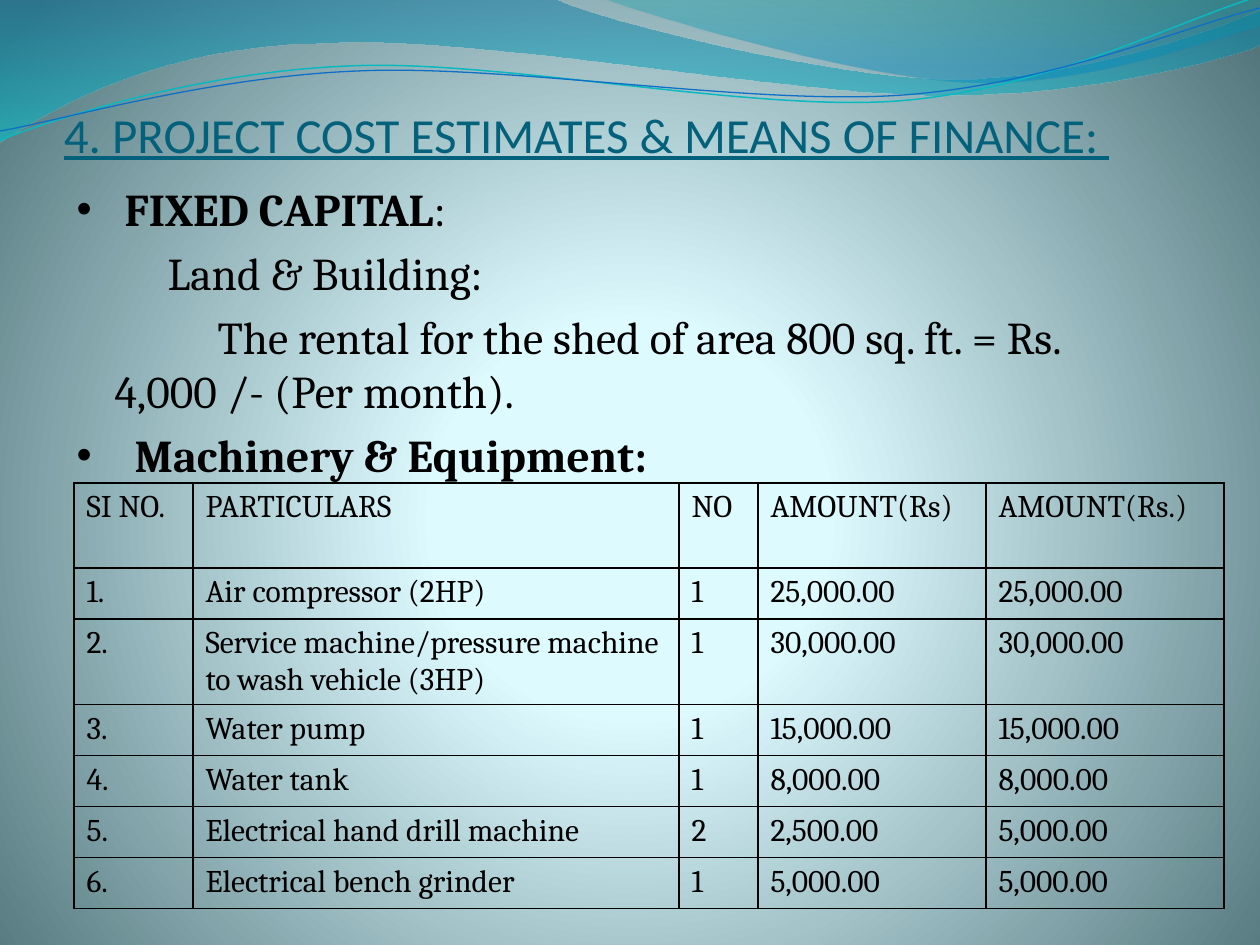
import math
from dataclasses import dataclass

import pptx
import pptx.dml.color
import pptx.enum.text
import pptx.oxml
import pptx.oxml.ns
import pptx.util
from lxml import etree

qn = pptx.oxml.ns.qn
A_NS = pptx.oxml.ns.nsdecls("a")
PX_PER_INCH = 126


@dataclass(frozen=True)
class Theme:
    ink: str = "000000"
    title: str = "04617B"
    teal_line: str = "0AB8BF"
    blue_line: str = "0F6FC6"
    heading_font: str = "Calibri"
    text_font: str = "Cambria"
    title_size: float = 28
    body_size: float = 26
    table_size: float = 18
    # Gradient stops: position %, colour, opacity %
    backdrop: tuple = ((0, "DEFBFF", 100), (25, "DDFAFF", 100), (100, "52767C", 100))
    wide_wave: tuple = ((0, "0074A1", 45), (100, "00C6CF", 55))
    corner_wave: tuple = ((0, "00A1A9", 30), (80, "008BBF", 45))


THEME = Theme()
DOWNWARD = '<a:lin ang="5400000" scaled="1"/>'
RADIAL = ('<a:path path="circle"><a:fillToRect l="10000" t="110000" '
          'r="10000" b="100000"/></a:path>')

# A 2-number step is a straight line, a 6-number step a Bézier curve.
WIDE_WAVE = [(0, 0), (554, -1), (600, 21, 837, 79, 955, 79),
             (1075, 79, 1207, 33, 1260, 11), (1261, 45),
             (1239, 55, 1096, 96, 940, 95), (784, 95, 481, 35, 324, 43),
             (163, 45, 58, 105, -1, 142), (0, 0)]
CORNER_WAVE = [(604, -1), (641, 14, 859, 78, 969, 82),
               (1079, 87, 1211, 40, 1260, 26), (1260, 0), (604, -1)]
TEAL_CURVE = [(0, 140), (60, 117, 199, 72, 349, 66),
              (498, 59, 747, 112, 898, 101), (1050, 89, 1182, 19, 1257, -3)]
BLUE_CURVE = [(0, 131), (59, 121, 207, 77, 357, 71),
              (508, 64, 752, 106, 903, 95), (1053, 84, 1185, 26, 1260, 8)]
CURVE_TILT = -2.7
CURVE_CENTER = (629, 73)

TITLE = "4. PROJECT COST ESTIMATES & MEANS OF FINANCE: "
# Left margin px, first-line indent px, bulleted, runs of (text, bold)
BODY = [
    (48, -48, True, [("FIXED CAPITAL", True), (":", False)]),
    (91, 0, False, [("Land & Building:", False)]),
    (38, 103, False, [("The rental for the shed of area 800 sq. ft. = Rs. "
                       "4,000 /- (Per month).", False)]),
    (58, -58, True, [("Machinery & Equipment:", True)]),
]
COLUMNS = [119, 486, 79, 228, 238]
HEADER_HEIGHT, ROW_HEIGHT = 85, 51
ROWS = [
    ("SI NO.", "PARTICULARS", "NO", "AMOUNT(Rs)", "AMOUNT(Rs.)"),
    ("1.", "Air compressor (2HP)", "1", "25,000.00", "25,000.00"),
    ("2.", "Service machine/pressure machine to wash vehicle (3HP)", "1",
     "30,000.00", "30,000.00"),
    ("3.", "Water pump", "1", "15,000.00", "15,000.00"),
    ("4.", "Water tank", "1", "8,000.00", "8,000.00"),
    ("5.", "Electrical hand drill machine", "2", "2,500.00", "5,000.00"),
    ("6.", "Electrical bench grinder", "1", "5,000.00", "5,000.00"),
]


def px(value):
    return pptx.util.Emu(round(value * 914400 / PX_PER_INCH))


def rgb(color):
    return pptx.dml.color.RGBColor.from_string(color)


def apply(target, **values):
    for name, value in values.items():
        setattr(target, name, value)


def add_run(p, text, color, size, **values):
    r = p.add_run()
    r.text = text
    r.font.color.rgb = rgb(color)
    apply(r.font, size=pptx.util.Pt(size), **values)


def set_gradient(fill, props, stops, shade):
    """Swap the solid fill in props for a gradient with opacity."""
    fill.solid()
    gs = "".join(
        f'<a:gs pos="{pos * 1000}"><a:srgbClr val="{color}">'
        f'<a:alpha val="{opacity * 1000}"/></a:srgbClr></a:gs>'
        for pos, color, opacity in stops)
    gradient = pptx.oxml.parse_xml(
        f'<a:gradFill {A_NS} rotWithShape="1"><a:gsLst>{gs}</a:gsLst>{shade}</a:gradFill>')
    props.replace(props.find(qn("a:solidFill")), gradient)


def turn(point, degrees):
    """Turn a point clockwise about the centre of the curves."""
    cos, sin = math.cos(math.radians(degrees)), math.sin(math.radians(degrees))
    dx, dy = (v - c for v, c in zip(point, CURVE_CENTER))
    return CURVE_CENTER[0] + dx * cos - dy * sin, CURVE_CENTER[1] + dx * sin + dy * cos


def add_outline(shapes, steps, close, tilt=0):
    """Build the outline on its corner points, then bend its curved segments."""
    segments = [[turn(step[i:i + 2], -tilt) for i in range(0, len(step), 2)]
                for step in steps]
    corners = [(px(x), px(y)) for x, y in (segment[-1] for segment in segments)]
    builder = shapes.build_freeform(*corners[0])
    builder.add_line_segments(corners[1:], close=close)
    sp = builder.convert_to_shape()
    lines = list(sp.element.spPr.iter(qn("a:lnTo")))
    for line, segment in zip(lines, segments[1:]):
        if len(segment) == 1:
            continue
        curve = etree.Element(qn("a:cubicBezTo"))
        for x, y in segment:
            etree.SubElement(curve, qn("a:pt"), x=str(px(x) - sp.left), y=str(px(y) - sp.top))
        line.getparent().replace(line, curve)
    sp.rotation = tilt
    sp.shadow.inherit = False
    return sp


def add_wave(s, steps, stops):
    sp = add_outline(s.shapes, steps, True)
    sp.line.fill.background()
    set_gradient(sp.fill, sp.element.spPr, stops, DOWNWARD)


def add_curve(group, steps, color, width):
    sp = add_outline(group.shapes, steps, False, CURVE_TILT)
    sp.fill.background()
    sp.line.color.rgb = rgb(color)
    sp.line.width = pptx.util.Pt(width)


def place(sp, left, top, width, height):
    """Position a placeholder and bring it to the front."""
    apply(sp, left=px(left), top=px(top), width=px(width), height=px(height))
    sp.element.getparent().append(sp.element)
    apply(sp.text_frame, word_wrap=True, auto_size=pptx.enum.text.MSO_AUTO_SIZE.NONE)
    return sp.text_frame


def fill_title(sp):
    tf = place(sp, 64, 65, 1134, 98)
    apply(tf, margin_left=0, margin_right=0, margin_bottom=0,
          vertical_anchor=pptx.enum.text.MSO_ANCHOR.BOTTOM)
    p = tf.paragraphs[0]
    p.alignment = pptx.enum.text.PP_ALIGN.LEFT
    add_run(p, TITLE, THEME.title, THEME.title_size,
            name=THEME.heading_font, underline=True)


def fill_body(sp):
    tf = place(sp, 64, 175, 1134, 656)
    tf.margin_right = px(50)
    for i, (margin, indent, bulleted, runs) in enumerate(BODY):
        p = tf.add_paragraph() if i else tf.paragraphs[0]
        p.space_before = pptx.util.Pt(THEME.body_size * 0.2)
        for text, bold in runs:
            add_run(p, text, THEME.ink, THEME.body_size, name=THEME.text_font, bold=bold)
        props = p._p.get_or_add_pPr()
        props.set("marL", str(px(margin)))
        props.set("indent", str(px(indent)))
        if bulleted:
            etree.SubElement(props, qn("a:buSzPct"), val="95000")
            etree.SubElement(props, qn("a:buChar"), char="•")
        else:
            etree.SubElement(props, qn("a:buNone"))


def set_borders(cell):
    props = cell._tc.get_or_add_tcPr()
    for i, side in enumerate("LRTB"):
        props.insert(i, pptx.oxml.parse_xml(
            f'<a:ln{side} {A_NS} w="12700"><a:solidFill>'
            f'<a:srgbClr val="{THEME.ink}"/></a:solidFill></a:ln{side}>'))


def add_equipment_table(s):
    heights = [HEADER_HEIGHT] + [ROW_HEIGHT] * (len(ROWS) - 1)
    table = s.shapes.add_table(len(ROWS), len(COLUMNS), px(74), px(483),
                               px(sum(COLUMNS)), px(sum(heights))).table
    apply(table, first_row=False, horz_banding=False)
    for column, width in zip(table.columns, COLUMNS):
        column.width = px(width)
    for row, height, texts in zip(table.rows, heights, ROWS):
        row.height = px(height)
        for cell, text in zip(row.cells, texts):
            cell.fill.background()
            set_borders(cell)
            add_run(cell.text_frame.paragraphs[0], text, THEME.ink,
                    THEME.table_size, name=THEME.text_font)


def main():
    prs = pptx.Presentation()
    apply(prs, slide_width=px(1260), slide_height=px(945))
    s = prs.slides.add_slide(prs.slide_layouts[1])
    fill = s.background.fill
    fill.solid()
    set_gradient(fill, s.element.find(".//" + qn("p:bgPr")), THEME.backdrop, RADIAL)
    add_wave(s, WIDE_WAVE, THEME.wide_wave)
    add_wave(s, CORNER_WAVE, THEME.corner_wave)
    curves = s.shapes.add_group_shape()
    add_curve(curves, TEAL_CURVE, THEME.teal_line, 0.85)
    add_curve(curves, BLUE_CURVE, THEME.blue_line, 0.75)
    fill_title(s.shapes.title)
    fill_body(s.placeholders[1])
    add_equipment_table(s)
    prs.save("out.pptx")


if __name__ == "__main__":
    main()
